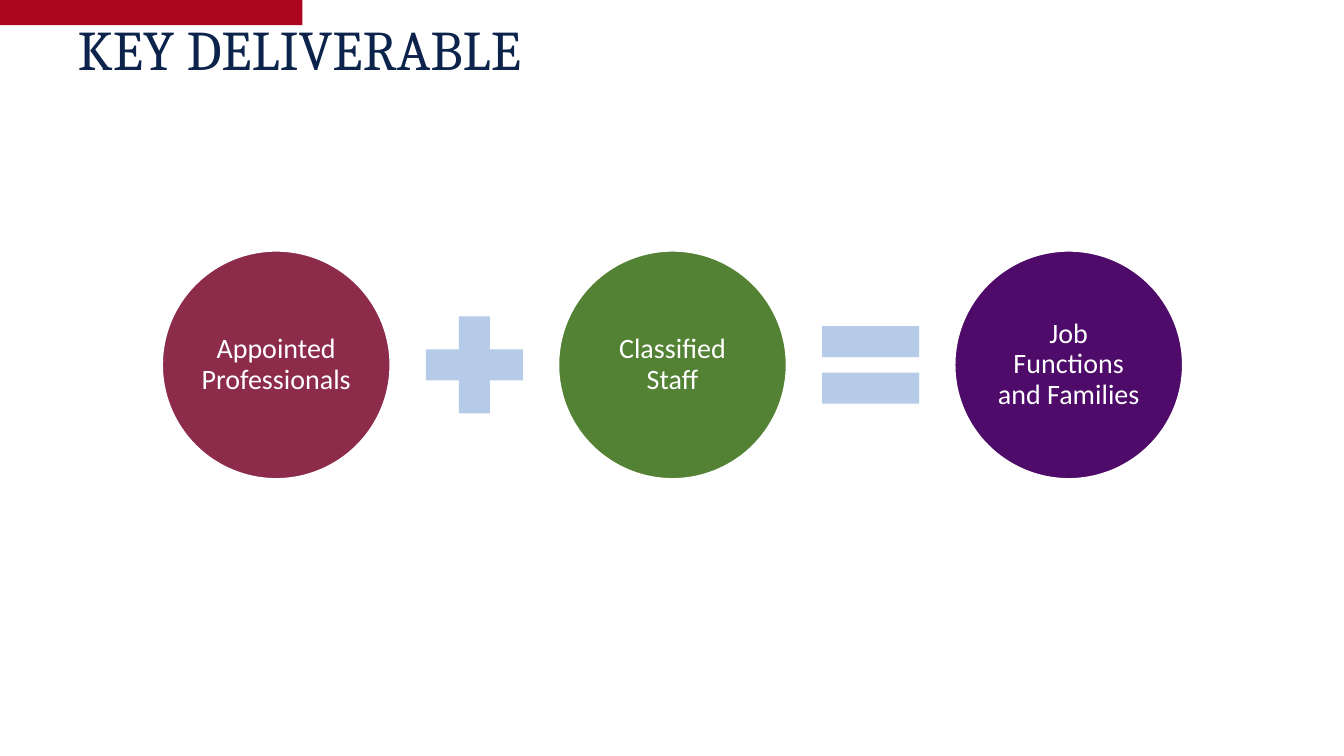
from pptx import Presentation
from pptx.dml.color import RGBColor
from pptx.enum.shapes import MSO_SHAPE as SHAPE
from pptx.enum.text import MSO_ANCHOR as ANCHOR, MSO_AUTO_SIZE as AUTO, PP_ALIGN as ALIGN
from pptx.util import Inches, Pt

NAVY, RED, WHITE, PALE_BLUE = "0C234B", "AB0520", "FFFFFF", "B5CBE7"
TERMS = [
    ("Appointed Professionals", "8C2C4A"),
    ("Classified Staff", "548235"),
    ("Job Functions and Families", "4E0B69"),
]
SIGNS = [SHAPE.MATH_PLUS, SHAPE.MATH_EQUAL]


def rgb(color):
    return RGBColor.from_string(color)


def set_attrs(obj, values):
    for name, value in values.items():
        setattr(obj, name, value)


def write(sp, text, size, font, color, align, inset):
    tf = sp.text_frame
    set_attrs(tf, {
        "word_wrap": True, "auto_size": AUTO.NONE, "vertical_anchor": ANCHOR.MIDDLE,
        **{f"margin_{side}": Inches(inset[side in ("top", "bottom")])
           for side in ("left", "right", "top", "bottom")},
    })
    p = tf.paragraphs[0]
    set_attrs(p, {"alignment": align, "line_spacing": 0.9})
    r = p.add_run()
    r.text = text
    set_attrs(r.font, {"size": Pt(size), "name": font})
    r.font.color.rgb = rgb(color)


def add_shape(s, kind, left, top, width, height, fill, line=None):
    sp = s.shapes.add_shape(kind, *map(Inches, (left, top, width, height)))
    sp.shadow.inherit = False
    sp.fill.solid()
    sp.fill.fore_color.rgb = rgb(fill)
    if line:
        sp.line.color.rgb = rgb(line)
        sp.line.width = Pt(1)
    else:
        sp.line.fill.background()
    return sp


def add_header(s, left, top, width, height):
    title = s.shapes.title
    set_attrs(title, {"left": Inches(left), "top": Inches(top),
                      "width": Inches(width), "height": Inches(height)})
    write(title, "KEY DELIVERABLE", 40, "Cambria", NAVY, ALIGN.LEFT, (0.1, 0.05))
    add_shape(s, SHAPE.RECTANGLE, 0, 0, 3, 0.25, RED)


def add_equation(s, left, top, circle, sign, gap):
    """Place the circles in a row, with a centred sign in each space between."""
    pitch = circle + sign + 2 * gap
    for i, (text, color) in enumerate(TERMS):
        x = left + i * pitch
        sp = add_shape(s, SHAPE.OVAL, x, top, circle, circle, color, WHITE)
        write(sp, text, 20, "Calibri", WHITE, ALIGN.CENTER, (0.03, 0.03))
        if i < len(SIGNS):
            add_shape(s, SIGNS[i], x + circle + gap, top + (circle - sign) / 2,
                      sign, sign, PALE_BLUE)


def main():
    prs = Presentation()
    prs.slide_width, prs.slide_height = Inches(13.33), Inches(7.5)
    s = prs.slides.add_slide(prs.slide_layouts[5])
    add_header(s, 0.67, 0.13, 6, 0.77)
    add_equation(s, 1.61, 2.49, circle=2.26, sign=1.31, gap=0.18)
    prs.save("out.pptx")


if __name__ == "__main__":
    main()
